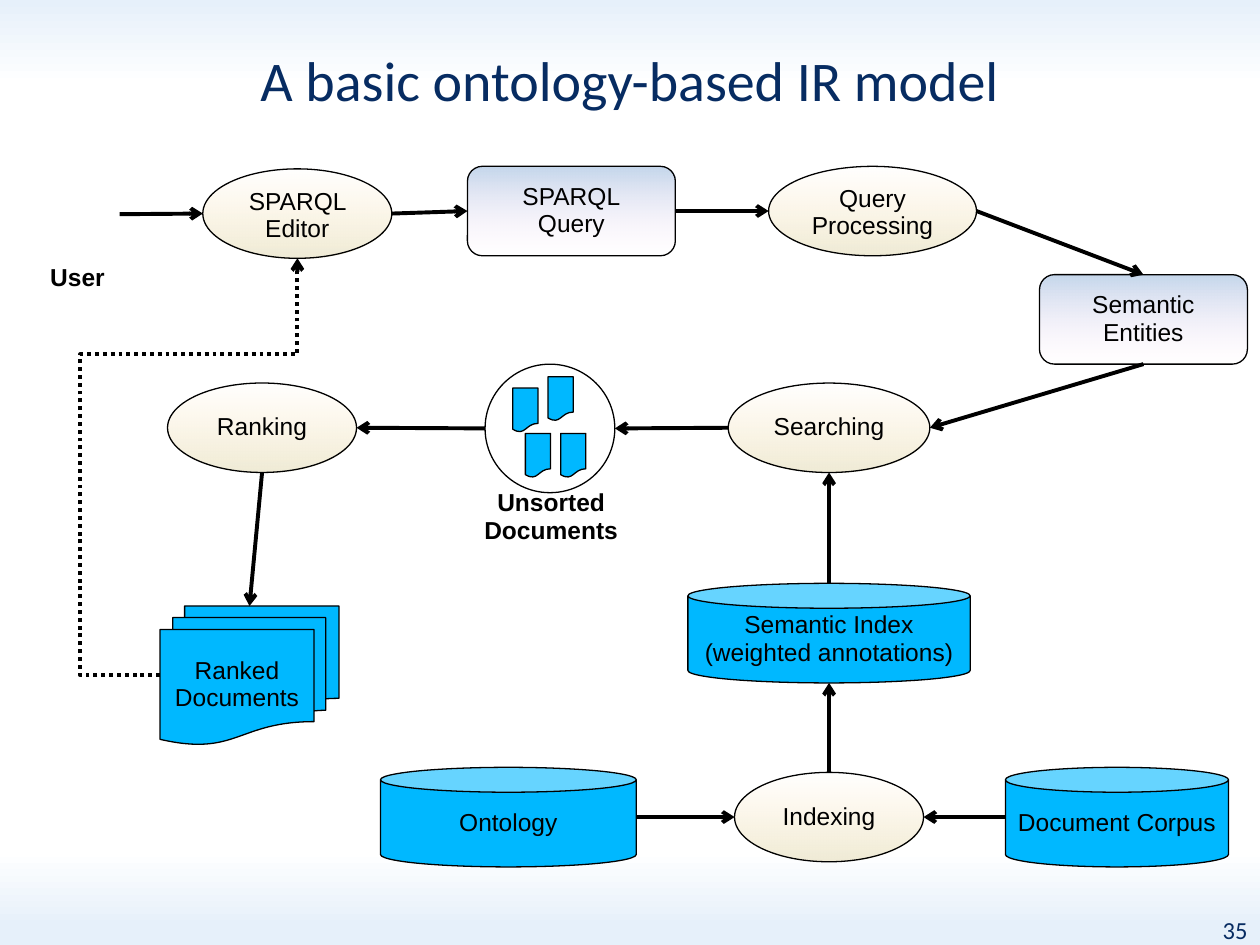
import pptx
import pptx.dml.color
import pptx.enum.dml
import pptx.enum.shapes
import pptx.enum.text
import pptx.oxml
import pptx.oxml.ns
import pptx.util
from lxml import etree

Inches = pptx.util.Inches
Pt = pptx.util.Pt
Shape = pptx.enum.shapes.MSO_SHAPE
Connector = pptx.enum.shapes.MSO_CONNECTOR
Align = pptx.enum.text.PP_ALIGN
Anchor = pptx.enum.text.MSO_ANCHOR
qn = pptx.oxml.ns.qn

TOP, LEFT, BOTTOM, RIGHT = range(4)
NAVY, BLACK, CYAN = "072C62", "000000", "00B8FF"

# Gradient stops: position in percent, colour, opacity in percent
PAGE_STOPS = [(0, "E6F0FA", 100), (9, "FFFFFF", 100), (90, "FFFFFF", 100), (98, "E6F0FA", 100)]
PROCESS_STOPS = [(0, "FFEFD1", 0), (100, "F0EBD5", 100)]
DATA_STOPS = [(0, "C4D6EB", 100), (100, "FFEBFA", 0)]


def color(value):
    return pptx.dml.color.RGBColor.from_string(value)


def side_point(shape, side):
    """Middle of one side of a shape."""
    x = {LEFT: 0, RIGHT: shape.width}.get(side, shape.width // 2)
    y = {TOP: 0, BOTTOM: shape.height}.get(side, shape.height // 2)
    return shape.left + x, shape.top + y


class Diagram:
    def __init__(self, page):
        self.page = page
        self.shapes = page.shapes

    def gradient(self, fill, element, stops):
        fill.gradient()
        fill.gradient_angle = 270
        stop_list = next(element.iter(qn("a:gsLst")))
        for old in list(stop_list):
            stop_list.remove(old)
        for position, value, opacity in stops:
            stop = etree.SubElement(stop_list, qn("a:gs"), pos=str(position * 1000))
            tint = etree.SubElement(stop, qn("a:srgbClr"), val=value)
            if opacity < 100:
                etree.SubElement(tint, qn("a:alpha"), val=str(opacity * 1000))

    def add_text(self, box, paragraphs, size=14, font="Arial", ink=BLACK, bold=False,
                 align=Align.CENTER, anchor=Anchor.MIDDLE, spacing=0.93):
        frame = box.text_frame
        frame.word_wrap = True
        frame.vertical_anchor = anchor
        for index, text in enumerate(paragraphs):
            para = frame.add_paragraph() if index else frame.paragraphs[0]
            para.alignment = align
            para.line_spacing = spacing
            for number, line in enumerate(text.split("\n")):
                if number:
                    para.add_line_break()
                span = para.add_run()
                span.text = line
                span.font.size = Pt(size)
                span.font.name = font
                span.font.bold = bold
                span.font.color.rgb = color(ink)

    def label(self, place, text, margin=None, **style):
        box = self.shapes.add_textbox(*map(Inches, place))
        if margin is not None:
            frame = box.text_frame
            frame.margin_left = frame.margin_right = Inches(margin)
            frame.margin_top = frame.margin_bottom = Inches(margin)
        self.add_text(box, [text], **style)

    def node(self, kind, place, fill, *paragraphs, **style):
        shape = self.shapes.add_shape(kind, *map(Inches, place))
        shape.shadow.inherit = False
        if fill is None:
            shape.fill.background()
        elif isinstance(fill, str):
            shape.fill.solid()
            shape.fill.fore_color.rgb = color(fill)
        else:
            self.gradient(shape.fill, shape._element, fill)
        shape.line.color.rgb = color(BLACK)
        shape.line.width = Pt(0.75)
        self.add_text(shape, paragraphs, **style)
        return shape

    def process(self, place, text, **style):
        return self.node(Shape.OVAL, place, PROCESS_STOPS, text, **style)

    def data(self, place, *paragraphs):
        return self.node(Shape.ROUNDED_RECTANGLE, place, DATA_STOPS, *paragraphs)

    def store(self, place, text):
        return self.node(Shape.CAN, place, CYAN, text)

    def line(self, kind, start, end, dash=None):
        link = self.shapes.add_connector(kind, *start, *end)
        link.line.color.rgb = color(BLACK)
        link.line.width = Pt(2.25)
        if dash is not None:
            link.line.dash_style = dash
        properties = link._element.spPr
        etree.SubElement(properties.find(qn("a:ln")), qn("a:tailEnd"), type="arrow")
        etree.SubElement(properties, qn("a:effectLst"))
        return link

    def arrow(self, source, source_side, target, target_side):
        link = self.line(Connector.STRAIGHT, side_point(source, source_side),
                         side_point(target, target_side))
        if source.auto_shape_type == Shape.ROUNDED_RECTANGLE:
            link.begin_connect(source, source_side)
        if target.auto_shape_type == Shape.ROUNDED_RECTANGLE:
            link.end_connect(target, target_side)

    def detour(self, start, end, first, second):
        """Dotted elbow arrow; its bends are given as shares of its width and height."""
        link = self.line(Connector.ELBOW, start, end, pptx.enum.dml.MSO_LINE.ROUND_DOT)
        geometry = link._element.spPr.find(qn("a:prstGeom"))
        geometry.set("prst", "bentConnector4")
        guides = geometry.find(qn("a:avLst"))
        if guides is None:
            guides = etree.SubElement(geometry, qn("a:avLst"))
        for name, share in (("adj1", first), ("adj2", second)):
            etree.SubElement(guides, qn("a:gd"), name=name, fmla=f"val {round(share * 100000)}")


def main():
    deck = pptx.Presentation()
    deck.slide_width, deck.slide_height = Inches(10), Inches(7.5)
    page = deck.slides.add_slide(deck.slide_layouts[6])
    diagram = Diagram(page)
    diagram.gradient(page.background.fill, page._element, PAGE_STOPS)

    # Title and page number
    diagram.label((0, 0.25, 10, 0.82), "A basic ontology-based IR model", margin=0,
                  size=32, font="Calibri", ink=NAVY)
    diagram.label((8.94, 7.21, 1.06, 0.28), "35", font="Calibri", ink=NAVY,
                  align=Align.RIGHT, anchor=Anchor.TOP, spacing=1)

    # Query steps
    editor = diagram.process((1.61, 1.34, 1.5, 0.71), "SPARQL Editor", anchor=Anchor.TOP)
    query = diagram.data((3.71, 1.32, 1.65, 0.71), "SPARQL", "Query")
    processing = diagram.process((6.1, 1.32, 1.65, 0.71), "Query Processing", anchor=Anchor.TOP)
    entities = diagram.data((8.25, 2.18, 1.65, 0.71), "Semantic Entities")

    # Search, ranking and indexing
    searching = diagram.process((5.78, 3.04, 1.6, 0.71), "Searching")
    ranking = diagram.process((1.33, 3.04, 1.5, 0.71), "Ranking")
    indexing = diagram.process((5.83, 6.13, 1.5, 0.71), "Indexing")

    # Stores and results
    ontology = diagram.store((3.02, 6.09, 2.03, 0.79), "Ontology")
    corpus = diagram.store((7.98, 6.09, 1.77, 0.79), "Document Corpus")
    index = diagram.store((5.46, 4.63, 2.24, 0.79), "Semantic Index\n(weighted annotations)")
    ranked = diagram.node(Shape.FLOWCHART_MULTIDOCUMENT, (1.27, 4.81, 1.42, 1.1), CYAN,
                          "Ranked Documents")

    # Unsorted documents
    unsorted = diagram.node(Shape.OVAL, (3.85, 2.89, 1.03, 1.02), None)
    for left, top in ((4.35, 2.99), (4.07, 3.08), (4.17, 3.44), (4.45, 3.44)):
        diagram.node(Shape.FLOWCHART_DOCUMENT, (left, top, 0.2, 0.35), CYAN)
    diagram.label((3.71, 3.84, 1.33, 0.54), "Unsorted Documents", bold=True, anchor=Anchor.TOP)

    # User
    diagram.label((0.3, 2.05, 0.67, 0.32), "User", bold=True, align=Align.LEFT, anchor=Anchor.TOP)
    diagram.line(Connector.STRAIGHT, (Inches(0.95), Inches(1.7)), side_point(editor, LEFT))

    # Flow
    for link in (
        (editor, RIGHT, query, LEFT),
        (query, RIGHT, processing, LEFT),
        (processing, RIGHT, entities, TOP),
        (entities, BOTTOM, searching, RIGHT),
        (searching, LEFT, unsorted, RIGHT),
        (unsorted, LEFT, ranking, RIGHT),
        (ranking, BOTTOM, ranked, TOP),
        (ontology, RIGHT, indexing, LEFT),
        (corpus, LEFT, indexing, RIGHT),
        (indexing, TOP, index, BOTTOM),
        (index, TOP, searching, BOTTOM),
    ):
        diagram.arrow(*link)

    # Feedback to the editor
    diagram.detour(side_point(ranked, LEFT), side_point(editor, BOTTOM), -0.58, 0.77)

    deck.save("out.pptx")


if __name__ == "__main__":
    main()
